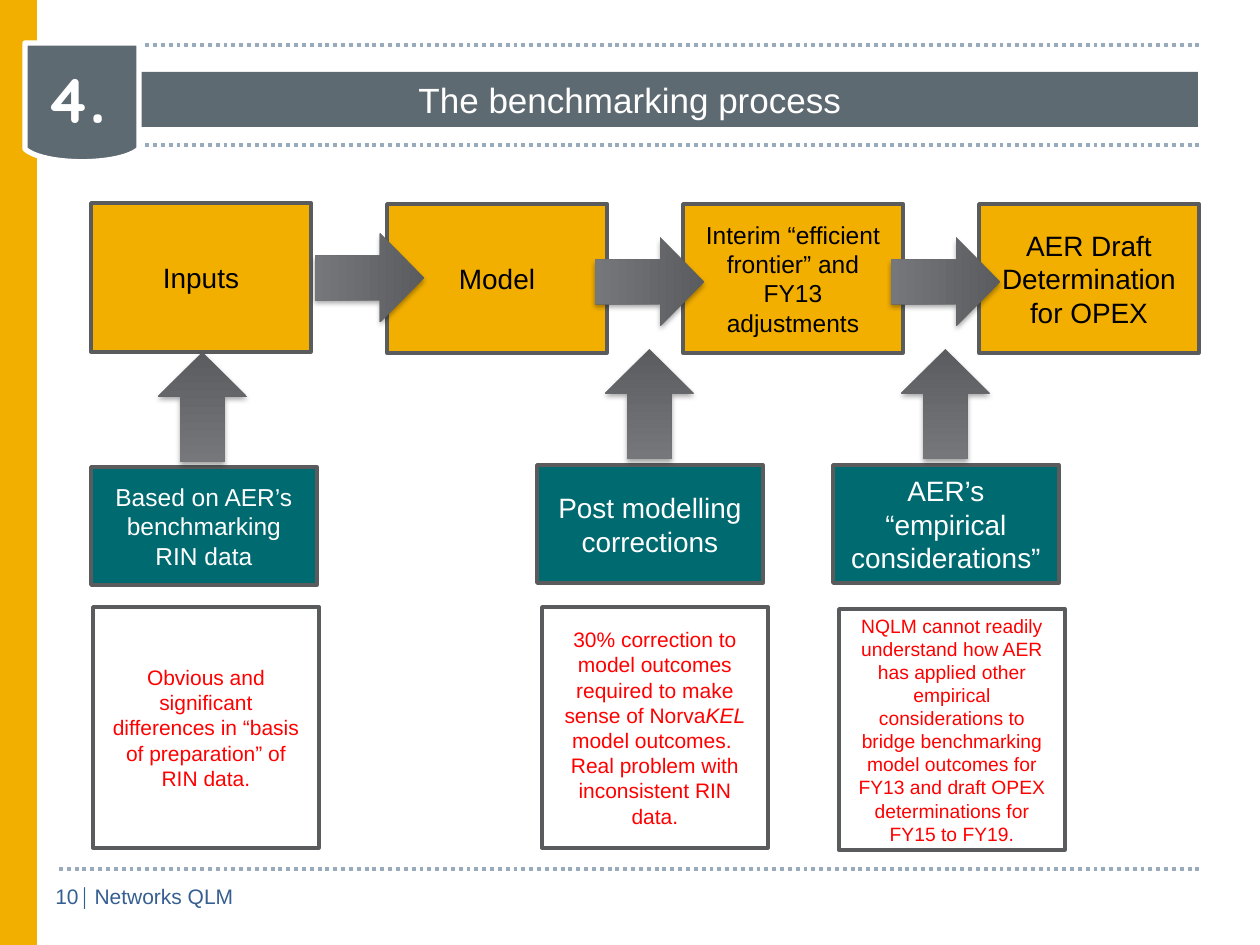
import pptx
import pptx.util
from lxml import etree
from pptx.dml.color import RGBColor
from pptx.enum.dml import MSO_LINE
from pptx.enum.shapes import MSO_CONNECTOR, MSO_SHAPE
from pptx.enum.text import MSO_ANCHOR, PP_ALIGN
from pptx.oxml.ns import qn

# Content: each paragraph is a list of (text, italic) runs or a plain string
TITLE = "The benchmarking process"
SECTION = "4."
PAGE = "10"
FOOTER = "│ Networks QLM"

STAGES = [  # left, top, type size, paragraphs
    (91, 203, "large", ["Inputs"]),
    (387, 204, "large", ["Model"]),
    (683, 204, "medium", ["Interim “efficient", "frontier” and FY13 adjustments"]),
    (979, 204, "large", ["AER Draft Determination for OPEX"]),
]
FACTORS = [
    (91, 467, "medium", ["Based on AER’s benchmarking RIN data"]),
    (537, 465, "large", ["Post modelling corrections"]),
    (833, 465, "large", ["AER’s “empirical considerations”"]),
]
CONCERNS = [
    (93, 607, "body", ["Obvious and significant differences in “basis of "
                       "preparation” of RIN data."]),
    (542, 607, "body", [[
        ("30% correction to model outcomes required to make sense of Norva", False),
        ("KEL", True),
        (" model outcomes.  Real problem with inconsistent RIN data.", False)]]),
    (839, 609, "small", ["NQLM cannot readily understand how AER has applied other "
                         "empirical considerations to bridge benchmarking model "
                         "outcomes for FY13 and draft OPEX determinations for "
                         "FY15 to FY19."]),
]
ARROWS = [  # left, top, rotation
    (605, 349, 0), (901, 349, 0), (325, 223, 90),
    (605, 227, 90), (901, 227, 90), (158, 352, 0),
]
RULES = [(59, 145), (59, 45), (59, 869)]

THEME = {
    "gold": "F2AF00", "slate": "5E6A71", "teal": "006A71", "border": "5A5B5D",
    "rule": "97ABBC", "footer": "365F91", "white": "FFFFFF", "black": "000000",
    "red": "FF0000", "arrow tip": "5A5C5F", "arrow tail": "75777B",
    "font": "Arial", "badge font": "Quicksand", "bar font": "Calibri",
    "badge": 36, "title": 20, "large": 16, "medium": 14, "body": 12, "small": 11,
}


def px(length):
    return round(length * 914400 / 126)


def colour(name):
    return RGBColor.from_string(THEME[name])


def write(shape, paragraphs, size, ink, align=PP_ALIGN.CENTER,
          anchor=MSO_ANCHOR.MIDDLE, font="font", bold=False):
    frame = shape.text_frame
    frame.word_wrap = True
    frame.vertical_anchor = anchor
    for index, content in enumerate(paragraphs):
        paragraph = frame.add_paragraph() if index else frame.paragraphs[0]
        paragraph.alignment = align
        paragraph.font.name = THEME[font]
        paragraph.font.size = pptx.util.Pt(THEME[size])
        paragraph.font.color.rgb = colour(ink)
        paragraph.font.bold = bold
        runs = [(content, False)] if isinstance(content, str) else content
        for text, italic in runs:
            run = paragraph.add_run()
            run.text = text
            if italic:
                run.font.italic = True


def paint(shape, fill=None, border=None, width=2):
    shape.shadow.inherit = False
    if fill:
        shape.fill.solid()
        shape.fill.fore_color.rgb = colour(fill)
    else:
        shape.fill.background()
    if border:
        shape.line.color.rgb = colour(border)
        shape.line.width = pptx.util.Pt(width)
    else:
        shape.line.fill.background()


def add_box(shapes, left, top, width, height, fill=None, border=None):
    box = shapes.add_shape(MSO_SHAPE.RECTANGLE, px(left), px(top), px(width), px(height))
    paint(box, fill, border)
    return box


def add_label(shapes, left, top, width, height, text, size, ink, **style):
    label = shapes.add_textbox(px(left), px(top), px(width), px(height))
    write(label, [text], size, ink, anchor=MSO_ANCHOR.TOP, **style)
    return label


def add_rule(shapes, left, top):
    rule = shapes.add_connector(MSO_CONNECTOR.STRAIGHT, px(left), px(top), px(1201), px(top))
    rule.line.color.rgb = colour("rule")
    rule.line.width = pptx.util.Pt(2.25)
    rule.line.dash_style = MSO_LINE.ROUND_DOT
    etree.SubElement(rule._element.spPr, qn("a:effectLst"))


def add_badge(shapes):
    left, right, top, shoulder, control = 25, 139, 43, 149, 166
    curve = []
    for step in range(1, 25):
        t = step / 24
        u = 1 - t
        x = u**3 * left + 3 * u * u * t * 44 + 3 * u * t * t * 120 + t**3 * right
        y = (u**3 + t**3) * shoulder + 3 * u * t * control
        curve.append((px(x), px(y)))
    outline = shapes.build_freeform(px(left), px(shoulder))
    outline.add_line_segments(curve + [(px(right), px(top)), (px(left), px(top))], close=True)
    paint(outline.convert_to_shape(), "slate", "white", 3)


def add_arrow(shapes, left, top, rotation):
    arrow = shapes.add_shape(MSO_SHAPE.UP_ARROW, px(left), px(top), px(89), px(110))
    paint(arrow)
    arrow.rotation = rotation
    arrow.fill.gradient()
    arrow.fill.gradient_angle = 270
    tip, tail = arrow.fill.gradient_stops
    tip.color.rgb, tip.position = colour("arrow tip"), 0
    tail.color.rgb, tail.position = colour("arrow tail"), 1
    # Soft shadow straight below, whatever the rotation
    effects = arrow._element.spPr.find(qn("a:effectLst"))
    shadow = etree.SubElement(
        effects, qn("a:outerShdw"), blurRad=str(pptx.util.Pt(3.1)),
        dist=str(pptx.util.Pt(1.8)), dir="5400000", rotWithShape="0")
    shade = etree.SubElement(shadow, qn("a:srgbClr"), val=THEME["black"])
    etree.SubElement(shade, qn("a:alpha"), val="35000")


def main():
    deck = pptx.Presentation()
    deck.slide_width, deck.slide_height = px(1260), px(945)
    shapes = deck.slides.add_slide(deck.slide_layouts[6]).shapes

    # Frame: rules, footer and side band
    for left, top in RULES:
        add_rule(shapes, left, top)
    footer = add_label(shapes, 67, 877, 200, 38, FOOTER, "body", "footer",
                       align=PP_ALIGN.LEFT)
    bar, owner = FOOTER.split(" ", 1)
    paragraph = footer.text_frame.paragraphs[0]
    paragraph.runs[0].text = bar + " "
    paragraph.runs[0].font.name = THEME["bar font"]
    paragraph.add_run().text = owner
    add_box(shapes, 0, 0, 37, 945, "gold")
    add_label(shapes, 33, 877, 58, 43, PAGE, "body", "footer", align=PP_ALIGN.RIGHT)

    # Heading
    write(add_box(shapes, 62, 72, 1136, 55, "slate"), [TITLE], "title", "white")
    add_badge(shapes)

    # Process boxes, then the arrows over them
    for row, width, height, fill, ink in (
            (STAGES, 220, 149, "gold", "black"),
            (FACTORS, 226, 118, "teal", "white"),
            (CONCERNS, 226, 241, None, "red")):
        for left, top, size, paragraphs in row:
            box = add_box(shapes, left, top, width, height, fill, "border")
            write(box, paragraphs, size, ink)
    for left, top, rotation in ARROWS:
        add_arrow(shapes, left, top, rotation)

    add_label(shapes, 33, 54, 115, 89, SECTION, "badge", "white",
              align=PP_ALIGN.LEFT, font="badge font", bold=True)
    deck.save("out.pptx")


if __name__ == "__main__":
    main()
